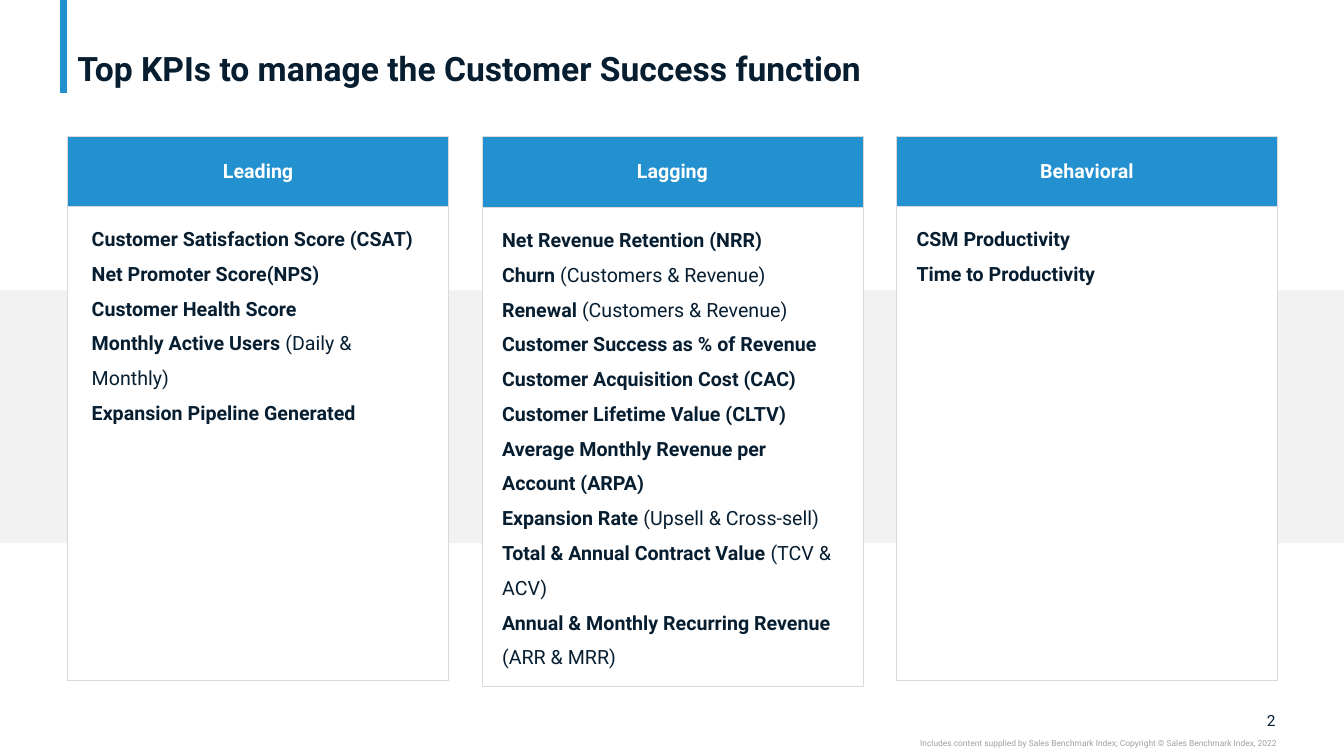
from lxml import etree
from pptx import Presentation
from pptx.dml.color import RGBColor
from pptx.enum.shapes import MSO_CONNECTOR, MSO_SHAPE
from pptx.enum.text import MSO_ANCHOR, PP_ALIGN
from pptx.oxml import parse_xml
from pptx.oxml.ns import nsdecls, qn
from pptx.util import Inches, Pt

TITLE = "Top KPIs to manage the Customer Success function"
PAGE_NUMBER = "2"
COPYRIGHT = ("Includes content supplied by Sales Benchmark Index; "
             "Copyright © Sales Benchmark Index, 2022")

# Each KPI is (bold name, regular detail).
KPI_GROUPS = [
    {"heading": "Leading", "rows": (0.7, 4.7), "inset": 0.24, "kpis": [
        ("Customer Satisfaction Score (CSAT)", ""),
        ("Net Promoter Score(NPS)", ""),
        ("Customer Health Score", ""),
        ("Monthly Active Users ", "(Daily & Monthly)"),
        ("Expansion Pipeline Generated", ""),
    ]},
    {"heading": "Lagging", "rows": (0.71, 4.68), "inset": 0.2, "kpis": [
        ("Net Revenue Retention (NRR)", ""),
        ("Churn ", "(Customers & Revenue)"),
        ("Renewal ", "(Customers & Revenue)"),
        ("Customer Success as % of Revenue", ""),
        ("Customer Acquisition Cost (CAC)", ""),
        ("Customer Lifetime Value (CLTV)", ""),
        ("Average Monthly Revenue per Account (ARPA)", ""),
        ("Expansion Rate ", "(Upsell & Cross-sell)"),
        ("Total & Annual Contract Value ", "(TCV & ACV)"),
        ("Annual & Monthly Recurring Revenue ", "(ARR & MRR)"),
    ]},
    {"heading": "Behavioral", "rows": (0.7, 4.7), "inset": 0.2, "kpis": [
        ("CSM Productivity", ""),
        ("Time to Productivity", ""),
    ]},
]

FONT = "Roboto"
BLUE = RGBColor(0x23, 0x91, 0xCF)
NAVY = RGBColor(0x07, 0x1E, 0x31)
WHITE = RGBColor(0xFF, 0xFF, 0xFF)
BAND_GRAY = RGBColor(0xF2, 0xF2, 0xF2)
BORDER_GRAY = RGBColor(0xD9, 0xD9, 0xD9)
CREDIT_GRAY = RGBColor(0xA0, 0xA0, 0xA0)
LEFT, RIGHT, CENTER = PP_ALIGN.LEFT, PP_ALIGN.RIGHT, PP_ALIGN.CENTER
TOP, MIDDLE, BOTTOM = MSO_ANCHOR.TOP, MSO_ANCHOR.MIDDLE, MSO_ANCHOR.BOTTOM

SLIDE_WIDTH, SLIDE_HEIGHT = 13.33, 7.5
MARGIN, TABLE_TOP, TABLE_WIDTH, TABLE_GAP = 0.67, 1.35, 3.78, 0.33


def style_run(run, size, color, bold=False):
    run.font.name = FONT
    run.font.size = Pt(size)
    run.font.color.rgb = color
    run.font.bold = bold


def add_label(slide, box, text, size, color, align, anchor, bold=False, inset=0):
    label = slide.shapes.add_textbox(*map(Inches, box))
    frame = label.text_frame
    frame.word_wrap = True
    frame.vertical_anchor = anchor
    frame.margin_left = frame.margin_right = Inches(inset)
    frame.margin_top = frame.margin_bottom = 0
    frame.text = text
    paragraph = frame.paragraphs[0]
    paragraph.alignment = align
    style_run(paragraph.runs[0], size, color, bold)
    return paragraph


def style_cell(cell, fill, inset, anchor):
    cell.fill.solid()
    cell.fill.fore_color.rgb = fill
    cell.margin_left = cell.margin_right = Inches(inset)
    cell.margin_top = cell.margin_bottom = Inches(0.1)
    cell.vertical_anchor = anchor
    properties = cell._tc.get_or_add_tcPr()
    for position, side in enumerate(("lnL", "lnR", "lnT", "lnB")):
        properties.insert(position, parse_xml(
            f'<a:{side} {nsdecls("a")} w="{Pt(0.5)}"><a:solidFill>'
            f'<a:srgbClr val="{BORDER_GRAY}"/></a:solidFill></a:{side}>'))


def add_kpi_table(slide, left, group):
    heights = group["rows"]
    table = slide.shapes.add_table(
        2, 1, Inches(left), Inches(TABLE_TOP),
        Inches(TABLE_WIDTH), Inches(sum(heights))).table
    table.horz_banding = False
    for row, height in zip(table.rows, heights):
        row.height = Inches(height)

    heading = table.cell(0, 0)
    style_cell(heading, BLUE, 0.03, MIDDLE)
    heading.text_frame.text = group["heading"]
    paragraph = heading.text_frame.paragraphs[0]
    paragraph.alignment = CENTER
    style_run(paragraph.runs[0], 14, WHITE, True)

    body = table.cell(1, 0)
    style_cell(body, WHITE, group["inset"], TOP)
    body.text_frame.text = "\n".join(name for name, _ in group["kpis"])
    for paragraph, (_, detail) in zip(body.text_frame.paragraphs, group["kpis"]):
        paragraph.line_spacing = 1.5
        style_run(paragraph.runs[0], 14, NAVY, True)
        if detail:
            detail_run = paragraph.add_run()
            detail_run.text = detail
            style_run(detail_run, 14, NAVY)


def main():
    deck = Presentation()
    deck.slide_width, deck.slide_height = Inches(SLIDE_WIDTH), Inches(SLIDE_HEIGHT)
    slide = deck.slides.add_slide(deck.slide_layouts[6])

    accent = slide.shapes.add_connector(
        MSO_CONNECTOR.STRAIGHT, Inches(0.63), 0, Inches(0.63), Inches(0.92))
    accent.line.color.rgb = BLUE
    accent.line.width = Pt(5)
    etree.SubElement(accent._element.spPr, qn("a:effectLst"))

    add_label(slide, (12.32, 7.05, 0.33, 0.19), PAGE_NUMBER, 11, NAVY, RIGHT, MIDDLE)
    add_label(slide, (7.5, 7.32, 5.16, 0.1), COPYRIGHT, 6, CREDIT_GRAY, RIGHT, TOP)

    band = slide.shapes.add_shape(
        MSO_SHAPE.RECTANGLE, 0, Inches(2.88), Inches(SLIDE_WIDTH), Inches(2.51))
    band.shadow.inherit = False
    band.fill.solid()
    band.fill.fore_color.rgb = BAND_GRAY
    band.line.fill.background()

    title = add_label(slide, (MARGIN, 0.04, 11.99, 0.84), TITLE, 24, NAVY,
                      LEFT, BOTTOM, bold=True, inset=0.1)
    title.line_spacing = 0.9

    for index, group in enumerate(KPI_GROUPS):
        add_kpi_table(slide, MARGIN + index * (TABLE_WIDTH + TABLE_GAP), group)

    deck.save("out.pptx")


if __name__ == "__main__":
    main()
